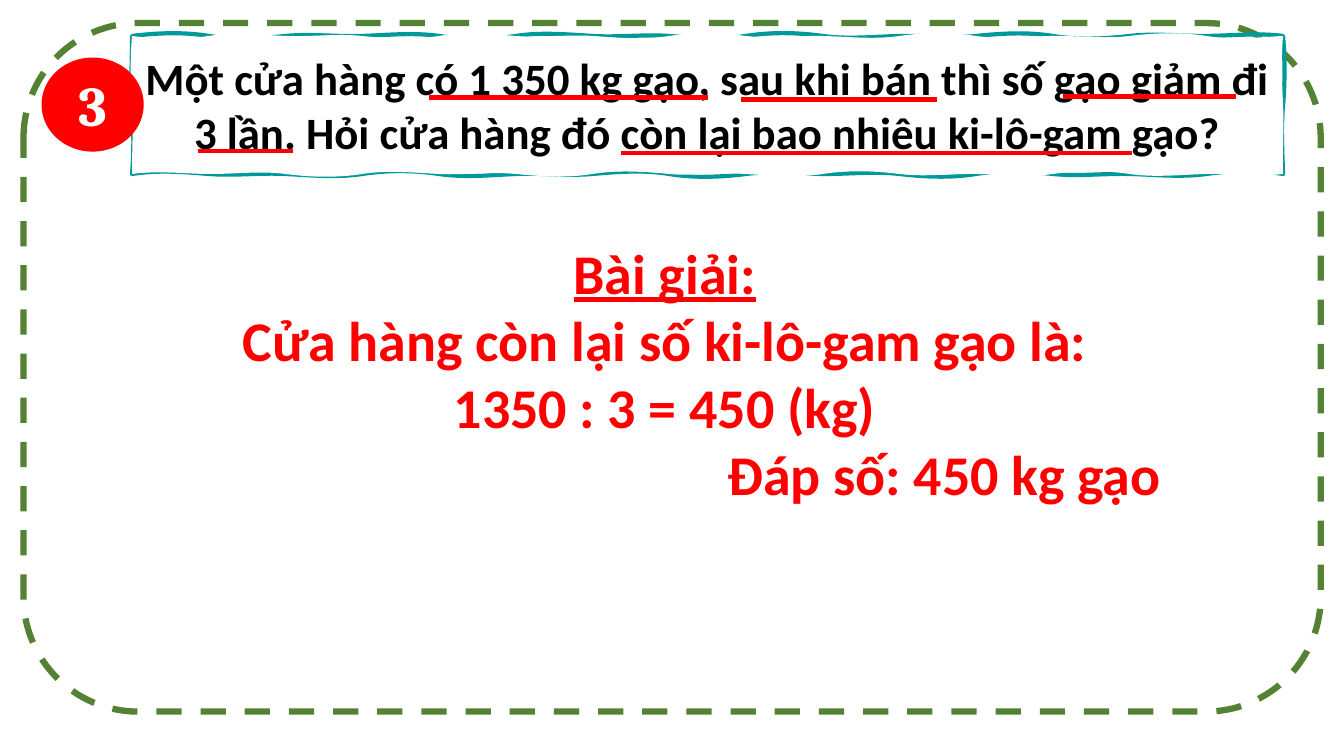
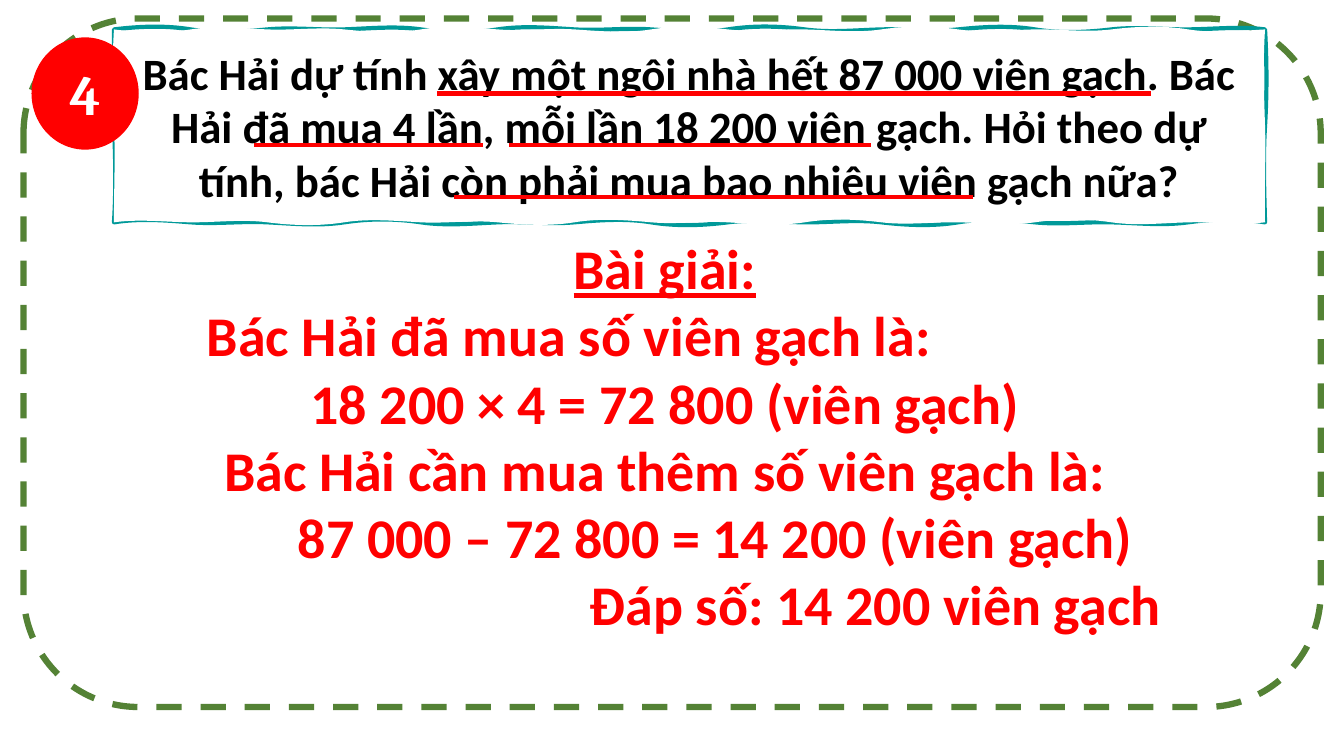
from dataclasses import dataclass
from math import sin

from lxml import etree
from pptx import Presentation
from pptx.dml.color import RGBColor
from pptx.enum.dml import MSO_LINE
from pptx.enum.shapes import MSO_CONNECTOR, MSO_SHAPE
from pptx.enum.text import MSO_ANCHOR, MSO_AUTO_SIZE, PP_ALIGN
from pptx.oxml.ns import qn
from pptx.util import Pt

LEFT, CENTER, RIGHT = PP_ALIGN.LEFT, PP_ALIGN.CENTER, PP_ALIGN.RIGHT
MIDDLE = MSO_ANCHOR.MIDDLE
FIT_SHAPE = MSO_AUTO_SIZE.SHAPE_TO_FIT_TEXT
DASH = MSO_LINE.DASH
STRAIGHT = MSO_CONNECTOR.STRAIGHT
ROUNDED, OVAL = MSO_SHAPE.ROUNDED_RECTANGLE, MSO_SHAPE.OVAL


@dataclass(frozen=True)
class Theme:
    white: RGBColor = RGBColor(0xFF, 0xFF, 0xFF)
    black: RGBColor = RGBColor(0, 0, 0)
    red: RGBColor = RGBColor(0xFF, 0, 0)
    green: RGBColor = RGBColor(0x54, 0x82, 0x35)
    teal: RGBColor = RGBColor(0, 0x99, 0x99)
    body_font: str = "Calibri"
    badge_font: str = "Cambria"
    question_size: int = 32
    solution_size: int = 40
    badge_size: int = 40
    frame_line: float = 4.5
    rule_line: float = 3
    badge_line: float = 1


THEME = Theme()


@dataclass(frozen=True)
class Box:
    left: float
    top: float
    width: float
    height: float

    def lengths(self):
        return Pt(self.left), Pt(self.top), Pt(self.width), Pt(self.height)


@dataclass(frozen=True)
class Step:
    text: str
    align: PP_ALIGN = CENTER
    indent: float = 0
    underline: bool = False


def paint(shape, fill, line, width):
    shape.shadow.inherit = False
    shape.fill.solid()
    shape.fill.fore_color.rgb = fill
    shape.line.color.rgb = line
    shape.line.width = Pt(width)


def style_text(para, font, size, color, align=CENTER, underline=False):
    para.alignment = align
    for span in para.runs:
        span.font.name = font
        span.font.size = Pt(size)
        span.font.bold = True
        span.font.underline = underline
        span.font.color.rgb = color


def add_frame(page, box):
    frame = page.shapes.add_shape(ROUNDED, *box.lengths())
    paint(frame, THEME.white, THEME.green, THEME.frame_line)
    frame.line.dash_style = DASH
    color = frame.fill._xPr.find(qn("a:solidFill"))[0]
    etree.SubElement(color, qn("a:alpha")).set("val", "90000")


def add_points(parent, tag, points):
    command = etree.SubElement(parent, qn(tag))
    for x, y in points:
        point = etree.SubElement(command, qn("a:pt"))
        point.set("x", str(Pt(x)))
        point.set("y", str(Pt(y)))


def add_sketch_path(paths, box, seed, hidden):
    sketch = etree.SubElement(paths, qn("a:path"))
    sketch.set("w", str(Pt(box.width)))
    sketch.set("h", str(Pt(box.height)))
    sketch.set(*hidden)
    corners = [(0, 0), (box.width, 0), (box.width, box.height), (0, box.height), (0, 0)]
    add_points(sketch, "a:moveTo", corners[:1])
    for side, (start, end) in enumerate(zip(corners, corners[1:])):
        across = side % 2
        count, depth = (2, 1.5) if across else (15, 3)
        step_x, step_y = (end[0] - start[0]) / count, (end[1] - start[1]) / count
        for index in range(count):
            x, y = start[0] + step_x * index, start[1] + step_y * index
            points = []
            for share, sign in ((1 / 3, -1), (2 / 3, 1)):
                knot = index + (sign > 0)
                sway = sign * depth * sin(seed * (knot + 4 * side + 1))
                points.append((x + step_x * share + sway * across,
                               y + step_y * share + sway * (1 - across)))
            points.append((x + step_x, y + step_y))
            add_points(sketch, "a:cubicBezTo", points)
    etree.SubElement(sketch, qn("a:close"))


def add_sketch_panel(page, box):
    left, top, width, height = box.lengths()
    builder = page.shapes.build_freeform(left, top)
    builder.add_line_segments(
        [(left + width, top), (left + width, top + height), (left, top + height)])
    panel = builder.convert_to_shape()
    paths = panel._element.spPr.find(qn("a:custGeom")).find(qn("a:pathLst"))
    paths.remove(paths[0])
    add_sketch_path(paths, box, 2.3, ("fill", "none"))
    add_sketch_path(paths, box, 4.1, ("stroke", "0"))
    paint(panel, THEME.white, THEME.teal, THEME.rule_line)
    return panel


def add_question(page, box, text, rules):
    frame = add_sketch_panel(page, box).text_frame
    frame.word_wrap = True
    frame.vertical_anchor = MIDDLE
    frame.text = text
    style_text(frame.paragraphs[0], THEME.body_font, THEME.question_size, THEME.black)
    for start, end, drop in rules:
        height = Pt(box.top + drop)
        rule = page.shapes.add_connector(
            STRAIGHT, Pt(box.left + start), height, Pt(box.left + end), height)
        rule.line.color.rgb = THEME.red
        rule.line.width = Pt(THEME.rule_line)
        etree.SubElement(rule._element.spPr, qn("a:effectLst"))


def add_solution(page, box, steps):
    frame = page.shapes.add_textbox(*box.lengths()).text_frame
    frame.word_wrap = True
    frame.auto_size = FIT_SHAPE
    frame.text = "\n".join(step.text for step in steps)
    for para, step in zip(frame.paragraphs, steps):
        style_text(para, THEME.body_font, THEME.solution_size, THEME.red,
                   step.align, step.underline)
        if step.indent:
            para._p.get_or_add_pPr().set("marL", str(Pt(step.indent)))


def add_badge(page, box, number):
    badge = page.shapes.add_shape(OVAL, *box.lengths())
    paint(badge, THEME.red, THEME.red, THEME.badge_line)
    frame = badge.text_frame
    frame.vertical_anchor = MIDDLE
    frame.text = number
    style_text(frame.paragraphs[0], THEME.badge_font, THEME.badge_size, THEME.white)


def add_exercise(deck, exercise):
    page = deck.slides.add_slide(deck.slide_layouts[6])
    add_frame(page, Box(16.8, exercise["frame_top"], 926.6, 491.8))
    add_question(page, exercise["question_box"], exercise["question"], exercise["rules"])
    add_solution(page, exercise["solution_box"], exercise["steps"])
    add_badge(page, exercise["badge_box"], exercise["number"])


HEADING = Step("Bài giải:", underline=True)

EXERCISES = [
    {
        "number": "3",
        "frame_top": 16.5,
        "badge_box": Box(30.2, 41.6, 72, 66.2),
        "question_box": Box(94.3, 25.7, 822.2, 98.6),
        "question": "Một cửa hàng có 1 350 kg gạo, sau khi bán thì số gạo giảm đi 3 lần. "
                    "Hỏi cửa hàng đó còn lại bao nhiêu ki-lô-gam gạo?",
        "rules": [(212.4, 411.1, 43.9), (434.9, 575.3, 45.4), (665.3, 788.4, 43.2),
                  (46.8, 115.2, 82.1), (349.2, 714.2, 83.5)],
        "solution_box": Box(113.4, 166.5, 722.9, 200.9),
        "steps": [
            HEADING,
            Step("Cửa hàng còn lại số ki-lô-gam gạo là:"),
            Step("1350 : 3 = 450 (kg)"),
            Step("Đáp số: 450 kg gạo", RIGHT),
        ],
    },
    {
        "number": "4",
        "frame_top": 13.2,
        "badge_box": Box(23, 27.2, 75.6, 79.2),
        "question_box": Box(81.4, 21, 822.2, 137.8),
        "question": "Bác Hải dự tính xây một ngôi nhà hết 87 000 viên gạch. "
                    "Bác Hải đã mua 4 lần, mỗi lần 18 200 viên gạch. "
                    "Hỏi theo dự tính, bác Hải còn phải mua bao nhiêu viên gạch nữa?",
        "rules": [(231.1, 740.9, 45.8), (100.1, 263.5, 82.6),
                  (282.2, 540.7, 82.6), (242.6, 613.4, 120)],
        "solution_box": Box(113.4, 163.4, 722.9, 298.1),
        "steps": [
            HEADING,
            Step("Bác Hải đã mua số viên gạch là:", LEFT, 27.2),
            Step("18 200 × 4 = 72 800 (viên gạch)"),
            Step("Bác Hải cần mua thêm số viên gạch là:"),
            Step("87 000 – 72 800 = 14 200 (viên gạch)", CENTER, 72),
            Step("Đáp số: 14 200 viên gạch", RIGHT),
        ],
    },
]


def main():
    deck = Presentation()
    deck.slide_width, deck.slide_height = Pt(960), Pt(540)
    for exercise in EXERCISES:
        add_exercise(deck, exercise)
    deck.save("out.pptx")


if __name__ == "__main__":
    main()
